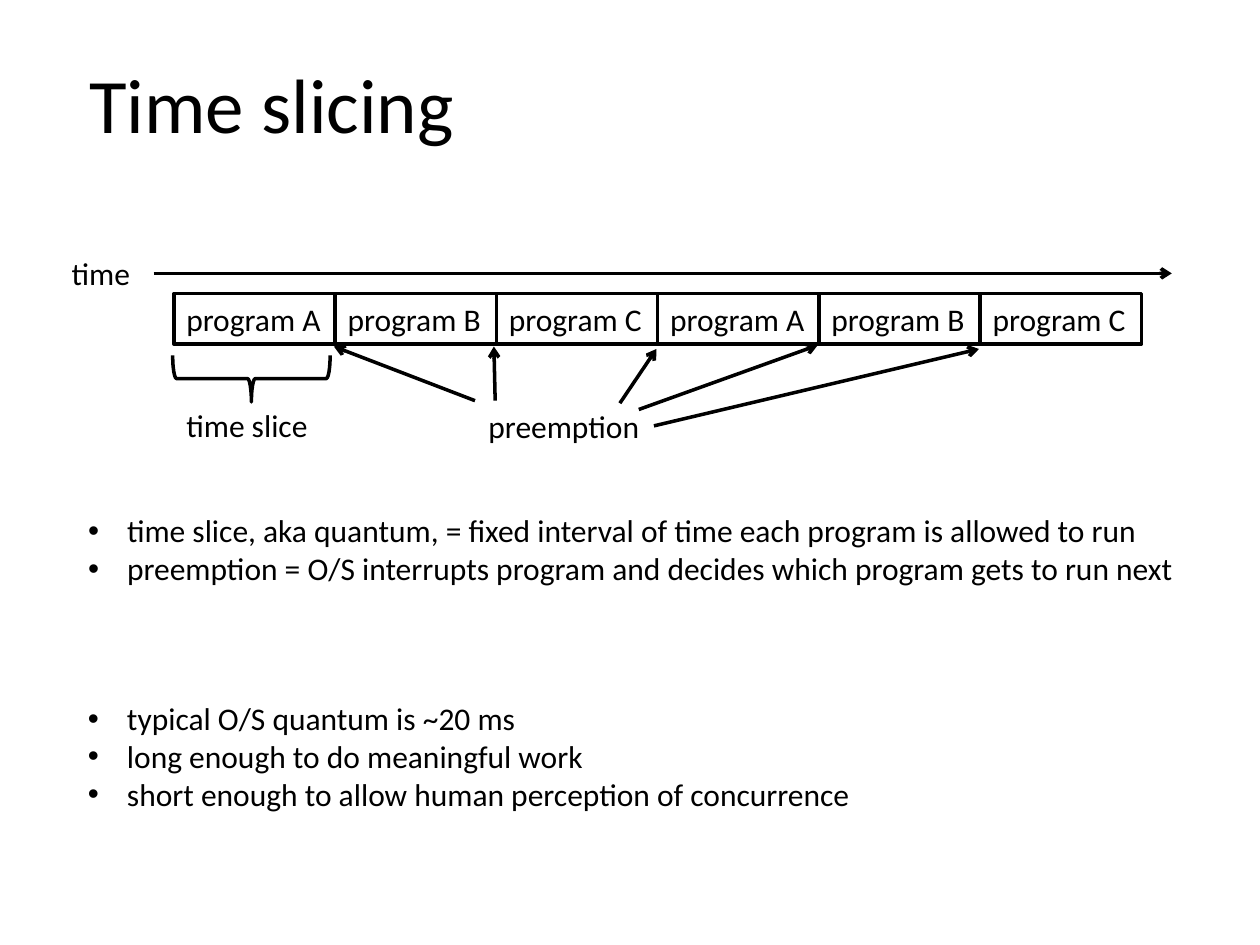
from lxml import etree
from pptx import Presentation
from pptx.dml.color import RGBColor
from pptx.enum import shapes, text
from pptx.oxml.ns import qn
from pptx.util import Inches, Pt

BLACK = "000000"
SLOT_W, SLOT_H = 1.28, 0.4


def rgb(value):
    return RGBColor.from_string(value)


def set_line(sp):
    sp.line.color.rgb = rgb(BLACK)
    sp.line.width = Pt(2)


def write(sp, lines, size=18, align=text.PP_ALIGN.LEFT, bullets=False):
    tf = sp.text_frame
    tf.word_wrap = False
    tf.auto_size = text.MSO_AUTO_SIZE.SHAPE_TO_FIT_TEXT
    tf.vertical_anchor = text.MSO_ANCHOR.TOP
    for i, line in enumerate(lines):
        p = tf.paragraphs[0] if i == 0 else tf.add_paragraph()
        p.alignment = align
        if bullets:
            pPr = p._p.get_or_add_pPr()
            pPr.set("marL", str(Inches(0.31)))
            pPr.set("indent", str(-Inches(0.31)))
            etree.SubElement(pPr, qn("a:buFont"), typeface="Arial")
            etree.SubElement(pPr, qn("a:buChar"), char="•")
        r = p.add_run()
        r.text = line
        r.font.name = "Calibri"
        r.font.size = Pt(size)
        r.font.color.rgb = rgb(BLACK)


def add_text(s, x, y, w, h, lines, **style):
    sp = s.shapes.add_textbox(Inches(x), Inches(y), Inches(w), Inches(h))
    write(sp, lines, **style)


def add_outline(s, kind, x, y, w, h):
    sp = s.shapes.add_shape(kind, Inches(x), Inches(y), Inches(w), Inches(h))
    sp.shadow.inherit = False
    sp.fill.background()
    set_line(sp)
    return sp


def add_arrow(s, x1, y1, x2, y2):
    cx = s.shapes.add_connector(shapes.MSO_CONNECTOR.STRAIGHT, Inches(x1),
                                Inches(y1), Inches(x2), Inches(y2))
    set_line(cx)
    etree.SubElement(cx.line._get_or_add_ln(), qn("a:tailEnd"), type="arrow")
    etree.SubElement(cx._element.spPr, qn("a:effectLst"))


def add_timeline(s, x, y, programs):
    """Time axis above a row of equal program slots starting at x, y."""
    for i, program in enumerate(programs):
        slot = add_outline(s, shapes.MSO_SHAPE.RECTANGLE,
                           x + i * SLOT_W, y, SLOT_W, SLOT_H)
        write(slot, [f"program {program}"])
    add_arrow(s, x - 0.16, y - 0.16, x + 7.92, y - 0.16)
    add_text(s, x - 0.91, y - 0.36, 0.67, 0.4, ["time"])


def add_time_slice(s, x, y):
    """Downward brace under the first slot, with its label."""
    depth, span = 0.37, 1.25
    brace = add_outline(s, shapes.MSO_SHAPE.RIGHT_BRACE,
                        x + (span - depth) / 2, y - (span - depth) / 2,
                        depth, span)
    brace.rotation = 90
    add_text(s, x, y + 0.35, 1.18, 0.4, ["time slice"],
             align=text.PP_ALIGN.CENTER)


def add_preemption(s, x, y):
    """Label with arrows to the slot boundaries above it."""
    add_text(s, x, y, 1.41, 0.4, ["preemption"], align=text.PP_ALIGN.CENTER)
    for x1, y1, x2, y2 in [(0, 0, -1.12, -0.43),
                           (0.16, 0, 0.15, -0.43),
                           (1.15, 0.02, 1.44, -0.41),
                           (1.3, 0.07, 2.72, -0.44),
                           (1.42, 0.2, 4, -0.41)]:
        add_arrow(s, x + x1, y + y1, x + x2, y + y2)


def main():
    prs = Presentation()
    prs.slide_width, prs.slide_height = Inches(10), Inches(7.5)
    s = prs.slides.add_slide(prs.slide_layouts[6])
    add_text(s, 0.61, 0.4, 3.13, 0.84, ["Time slicing"], size=44)
    add_timeline(s, 1.38, 2.33, "ABCABC")
    add_time_slice(s, 1.37, 2.82)
    add_preemption(s, 3.77, 3.18)
    add_text(s, 0.6, 4.01, 8.92, 0.71, [
        "time slice, aka quantum, = fixed interval of time each program is allowed to run",
        "preemption = O/S interrupts program and decides which program gets to run next",
    ], bullets=True)
    add_text(s, 0.6, 5.5, 6.4, 1.01, [
        "typical O/S quantum is ~20 ms",
        "long enough to do meaningful work",
        "short enough to allow human perception of concurrence",
    ], bullets=True)
    prs.save("out.pptx")


if __name__ == "__main__":
    main()
